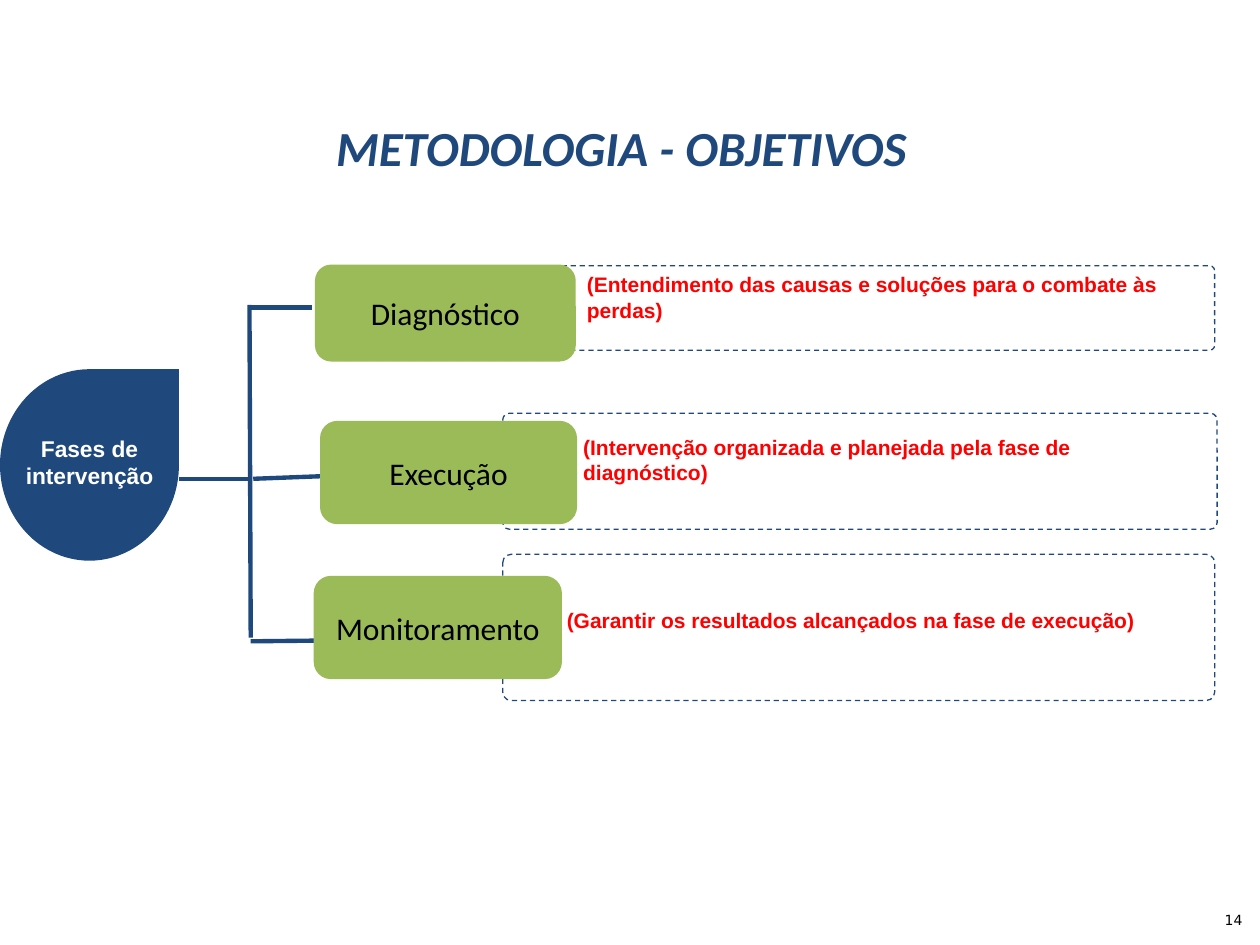
from dataclasses import dataclass
from typing import NamedTuple, Optional

from lxml.etree import SubElement
from pptx import Presentation
from pptx.dml.color import RGBColor
from pptx.enum.dml import MSO_LINE_DASH_STYLE as Dash
from pptx.enum.shapes import MSO_CONNECTOR as Connector, MSO_SHAPE as Shape
from pptx.enum.text import MSO_ANCHOR as Anchor, PP_ALIGN as Align
from pptx.oxml.ns import qn
from pptx.util import Inches, Pt


@dataclass(frozen=True)
class Theme:
    navy: RGBColor = RGBColor(0x1F, 0x49, 0x7D)
    green: RGBColor = RGBColor(0x9B, 0xBB, 0x59)
    red: RGBColor = RGBColor(0xFF, 0x00, 0x00)
    black: RGBColor = RGBColor(0x00, 0x00, 0x00)
    white: RGBColor = RGBColor(0xFF, 0xFF, 0xFF)
    heading_font: str = "Calibri"
    body_font: str = "Arial"
    number_font: str = "DejaVu Sans"
    title_size: float = 28
    phase_size: float = 18
    root_size: float = 13
    note_size: float = 12
    number_size: float = 8
    frame_width: float = 0.75
    branch_width: float = 2.5


class Box(NamedTuple):
    left: float
    top: float
    width: float
    height: float

    def lengths(self):
        return [Inches(value) for value in self]


class Phase(NamedTuple):
    name: str
    note: str
    frame: Box
    label: Box
    note_box: Box


class Line(NamedTuple):
    x1: float
    y1: float
    x2: float
    y2: float


THEME = Theme()

PHASES = [
    Phase("Diagnóstico",
          "(Entendimento das causas e soluções para o combate às perdas)",
          Box(3.69, 2.11, 5.95, 0.67), Box(2.5, 2.1, 2.07, 0.77),
          Box(4.56, 2.11, 5, 0.5)),
    Phase("Execução",
          "(Intervenção organizada e planejada pela fase de diagnóstico)",
          Box(3.99, 3.28, 5.67, 0.92), Box(2.54, 3.34, 2.04, 0.82),
          Box(4.53, 3.4, 4.88, 0.5)),
    Phase("Monitoramento",
          "(Garantir os resultados alcançados na fase de execução)",
          Box(3.99, 4.4, 5.65, 1.16), Box(2.49, 4.57, 1.97, 0.82),
          Box(4.4, 4.77, 5.33, 0.3)),
]

BRANCHES = [
    Line(1.99, 5.06, 1.98, 2.42),  # trunk
    Line(1.42, 3.8, 1.97, 3.8),    # root to trunk
    Line(1.99, 2.44, 2.48, 2.44),
    Line(2.01, 3.8, 2.54, 3.78),
    Line(1.99, 5.09, 2.91, 5.08),
]


def write(shape, text: str, font_name: str, size: float, color: RGBColor,
          align: Align = Align.LEFT, anchor: Anchor = Anchor.TOP,
          bold: bool = False, italic: bool = False) -> None:
    frame = shape.text_frame
    frame.text = text
    frame.word_wrap = True
    frame.vertical_anchor = anchor
    paragraph = frame.paragraphs[0]
    paragraph.alignment = align
    font = paragraph.runs[0].font
    font.name, font.size, font.color.rgb = font_name, Pt(size), color
    font.bold, font.italic = bold, italic


def add_filled(slide, kind: Shape, box: Box, color: RGBColor):
    shape = slide.shapes.add_shape(kind, *box.lengths())
    shape.shadow.inherit = False
    shape.fill.solid()
    shape.fill.fore_color.rgb = color
    shape.line.fill.background()
    return shape


def add_frame(slide, box: Box) -> None:
    shape = slide.shapes.add_shape(Shape.ROUNDED_RECTANGLE, *box.lengths())
    shape.adjustments[0] = 0.057
    shape.shadow.inherit = False
    shape.fill.background()
    shape.line.color.rgb = THEME.navy
    shape.line.width = Pt(THEME.frame_width)
    shape.line.dash_style = Dash.DASH


def add_branch(slide, line: Line) -> None:
    connector = slide.shapes.add_connector(
        Connector.STRAIGHT, *[Inches(value) for value in line])
    connector.line.color.rgb = THEME.navy
    connector.line.width = Pt(THEME.branch_width)
    SubElement(connector._element.spPr, qn("a:effectLst"))


def add_text(slide, box: Box, text: str, font_name: str, size: float,
             color: RGBColor, align: Optional[Align] = Align.LEFT,
             anchor: Anchor = Anchor.TOP, bold: bool = True) -> None:
    text_box = slide.shapes.add_textbox(*box.lengths())
    write(text_box, text, font_name, size, color, align, anchor, bold)


def add_phase(slide, phase: Phase) -> None:
    label = add_filled(slide, Shape.ROUNDED_RECTANGLE, phase.label, THEME.green)
    write(label, phase.name, THEME.heading_font, THEME.phase_size, THEME.black,
          Align.CENTER, Anchor.MIDDLE)
    add_text(slide, phase.note_box, phase.note, THEME.body_font,
             THEME.note_size, THEME.red)


def main() -> None:
    presentation = Presentation()
    presentation.slide_width, presentation.slide_height = Inches(10), Inches(7.5)
    slide = presentation.slides.add_slide(presentation.slide_layouts[5])

    # Title
    title = slide.shapes.title
    title.left, title.top, title.width, title.height = Box(0.43, 0.54, 9, 1.25).lengths()
    write(title, "METODOLOGIA - OBJETIVOS", THEME.heading_font, THEME.title_size,
          THEME.navy, Align.CENTER, Anchor.MIDDLE, bold=True, italic=True)

    # Dashed frames and branches lie behind the phase labels
    for phase in PHASES:
        add_frame(slide, phase.frame)
    for line in BRANCHES:
        add_branch(slide, line)

    # Root of the tree
    add_filled(slide, Shape.TEAR, Box(0, 2.93, 1.42, 1.52), THEME.navy)
    add_text(slide, Box(0.04, 3.4, 1.34, 0.54), "Fases de intervenção",
             THEME.body_font, THEME.root_size, THEME.white, Align.CENTER)

    # Phases with their goals
    for phase in PHASES:
        add_phase(slide, phase)

    # Slide number
    add_text(slide, Box(7.63, 7.1, 2.33, 0.4), "14", THEME.number_font,
             THEME.number_size, THEME.black, Align.RIGHT, Anchor.MIDDLE, bold=False)

    presentation.save("out.pptx")


if __name__ == "__main__":
    main()
